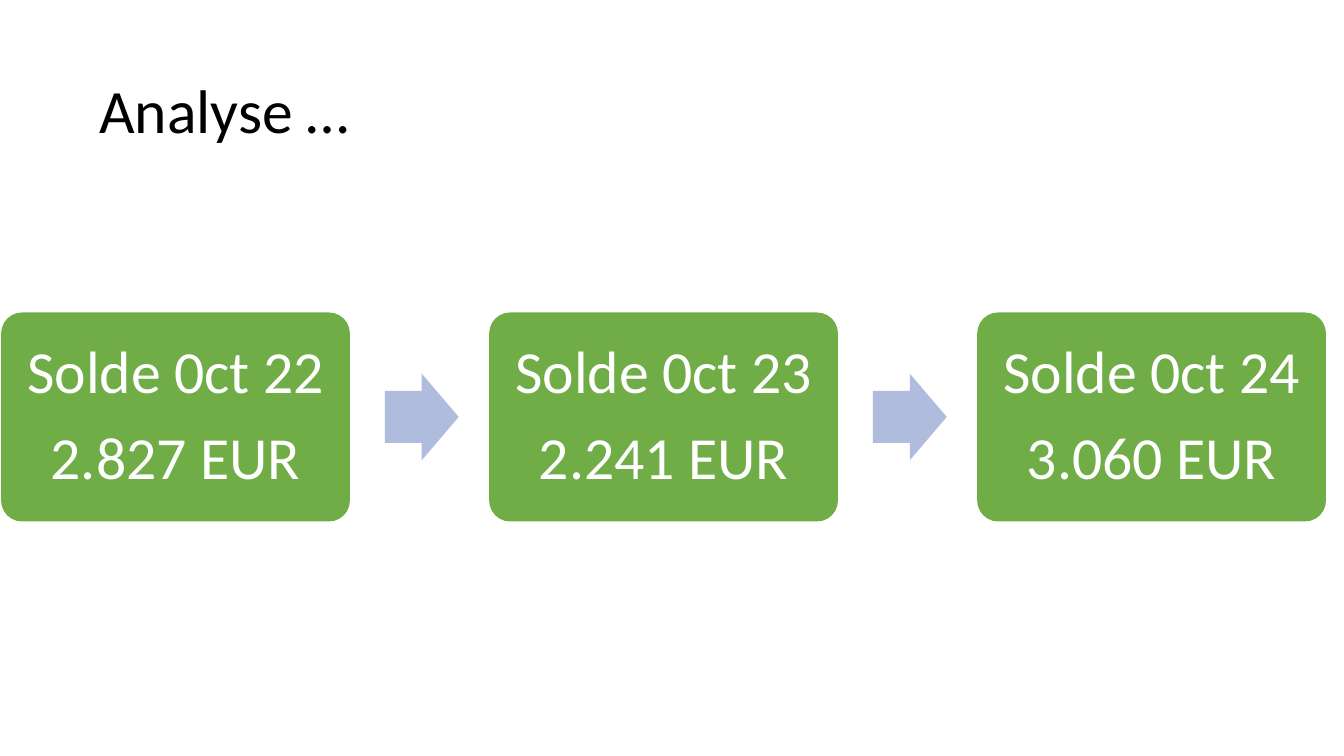
import pptx
import pptx.util
import pptx.dml.color
import pptx.enum.shapes
import pptx.enum.text

Pt = pptx.util.Pt
SHAPE = pptx.enum.shapes.MSO_SHAPE
ALIGN = pptx.enum.text.PP_ALIGN

TITLE = "Analyse …"
BALANCES = [
    ("Solde 0ct 22", "2.827 EUR"),
    ("Solde 0ct 23", "2.241 EUR"),
    ("Solde 0ct 24", "3.060 EUR"),
]
GREEN, BLUE, WHITE, BLACK = "70AD47", "B0BCDE", "FFFFFF", "000000"

LEFT, STEP = 1.2, 522.9
BOX_TOP, BOX_W, BOX_H = 334.8, 373.7, 223.9
ARROW_GAP, ARROW_W, ARROW_H = 37.4, 79.2, 92.7


def rgb(color):
    return pptx.dml.color.RGBColor.from_string(color)


def add_shape(s, kind, x, y, w, h, color, adjustments):
    sp = s.shapes.add_shape(kind, Pt(x), Pt(y), Pt(w), Pt(h))
    sp.shadow.inherit = False
    sp.fill.solid()
    sp.fill.fore_color.rgb = rgb(color)
    sp.line.fill.background()
    for i, value in enumerate(adjustments):
        sp.adjustments[i] = value
    return sp


def set_text(sp, lines, size, color, align, margins, space_after=0):
    tf = sp.text_frame
    tf.word_wrap = True
    tf.vertical_anchor = pptx.enum.text.MSO_ANCHOR.MIDDLE
    tf.margin_left = tf.margin_right = Pt(margins[0])
    tf.margin_top = tf.margin_bottom = Pt(margins[1])
    tf.text = "\n".join(lines)
    for p in tf.paragraphs:
        p.alignment = align
        p.line_spacing = 0.9
        p.space_after = Pt(space_after)
        p.font.name = "Calibri"
        p.font.size = Pt(size)
        p.font.color.rgb = rgb(color)


def main():
    prs = pptx.Presentation()
    prs.slide_width, prs.slide_height = Pt(1440), Pt(810)
    s = prs.slides.add_slide(prs.slide_layouts[6])

    title = s.shapes.add_textbox(Pt(99.4), Pt(43.2), Pt(1242), Pt(156.2))
    set_text(title, [TITLE], 66, BLACK, ALIGN.LEFT, (7.2, 3.6))

    for i, lines in enumerate(BALANCES):
        x = LEFT + i * STEP
        box = add_shape(s, SHAPE.ROUNDED_RECTANGLE, x, BOX_TOP, BOX_W, BOX_H, GREEN, [0.1])
        set_text(box, lines, 64, WHITE, ALIGN.CENTER, (19.2, 19.2), 22.4)
        if i < len(BALANCES) - 1:
            add_shape(s, SHAPE.RIGHT_ARROW, x + BOX_W + ARROW_GAP,
                      BOX_TOP + (BOX_H - ARROW_H) / 2, ARROW_W, ARROW_H, BLUE, [0.6, 0.5])

    prs.save("out.pptx")


if __name__ == "__main__":
    main()
